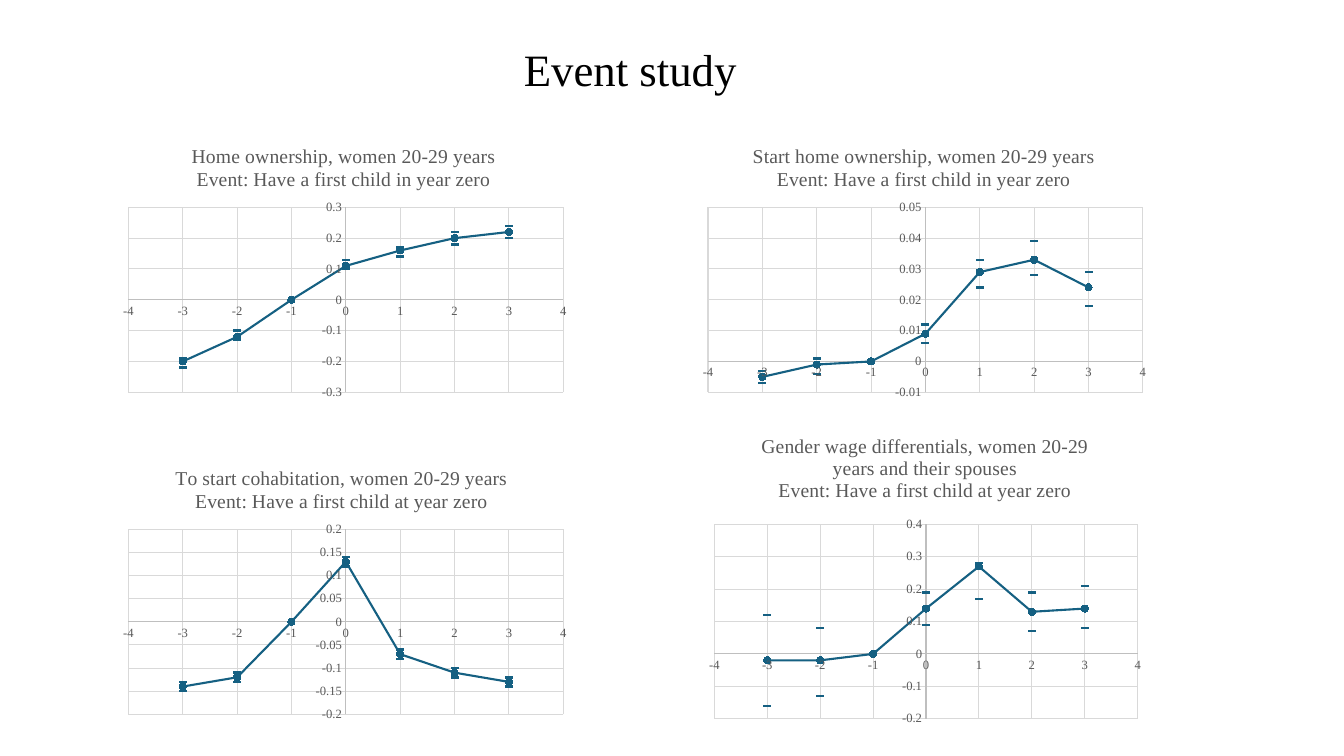
from lxml import etree
from pptx import Presentation
from pptx.chart.data import XyChartData
from pptx.dml.color import RGBColor
from pptx.enum import chart as ch, text as tx
from pptx.oxml import ns
from pptx.util import Pt

# Content: title lines, then estimate, lower and upper bound by year
FACE = "Times New Roman"
BLUE, GRAY, GRID, AXIS = "156082", "595959", "D9D9D9", "BFBFBF"
HEAD = "Event study"
YEARS = [-3, -2, -1, 0, 1, 2, 3]
GAP = None
AUTO = None
PLOT = (0.03, 0.28, 0.94, 0.67)
PANELS = [
    dict(at=(81.8, 92.9, 330.5, 197.3), plot=PLOT, name=(0.16, 0.04),
         axis=AUTO,
         title=["Home ownership, women 20-29 years",
                "Event: Have a first child in year zero"],
         rows=[[-0.2, -0.12, 0, 0.11, 0.16, 0.2, 0.22],
               [-0.22, -0.13, GAP, 0.1, 0.14, 0.18, 0.2],
               [-0.19, -0.1, GAP, 0.13, 0.17, 0.22, 0.24]]),
    dict(at=(495.8, 92.9, 330.5, 197.3), plot=PLOT, name=(0.12, 0.04),
         axis=(-0.01, 0.05, 0.01),
         title=["Start home ownership, women 20-29 years",
                "Event: Have a first child in year zero"],
         rows=[[-0.005, -0.001, 0, 0.009, 0.029, 0.033, 0.024],
               [-0.007, -0.004, GAP, 0.006, 0.024, 0.028, 0.018],
               [-0.003, 0.001, GAP, 0.012, 0.033, 0.039, 0.029]]),
    dict(at=(81.8, 322.9, 330.5, 197.3), plot=PLOT, name=(0.125, 0.04),
         axis=(-0.2, 0.2, 0.05),
         title=["To start cohabitation, women 20-29 years",
                "Event: Have a first child at year zero"],
         rows=[[-0.14, -0.12, 0, 0.13, -0.07, -0.11, -0.13],
               [-0.15, -0.13, GAP, 0.12, -0.08, -0.12, -0.14],
               [-0.13, -0.11, GAP, 0.14, -0.06, -0.1, -0.12]]),
    dict(at=(495.4, 299.5, 330.5, 229), plot=(0.045, 0.328, 0.915, 0.606),
         name=(0.14, 0.035), axis=(-0.2, 0.4, 0.1),
         title=["Gender wage differentials, women 20-29 years and their spouses",
                "Event: Have a first child at year zero"],
         rows=[[-0.02, -0.02, 0, 0.14, 0.27, 0.13, 0.14],
               [-0.16, -0.13, GAP, 0.09, 0.17, 0.07, 0.08],
               [0.12, 0.08, GAP, 0.19, 0.28, 0.19, 0.21]]),
]


def color(code):
    return RGBColor.from_string(code)


def style(font, size, code):
    font.name, font.size, font.bold = FACE, Pt(size), False
    font.color.rgb = color(code)


def stroke(line, code, width):
    line.color.rgb = color(code)
    line.width = Pt(width)


def place(owner, spots, inner=False):
    """Give a chart part a fixed place, as shares of the chart."""
    old = owner.find(ns.qn("c:layout"))
    if old is not None:
        owner.remove(old)
    first = owner.find(ns.qn("c:tx"))
    lay = etree.Element(ns.qn("c:layout"))
    owner.insert(0 if first is None else 1, lay)
    man = etree.SubElement(lay, ns.qn("c:manualLayout"))
    tags = [("layoutTarget", "inner")] if inner else []
    tags += [("xMode", "edge"), ("yMode", "edge")]
    tags += zip("xywh", spots)
    for tag, val in tags:
        etree.SubElement(man, ns.qn("c:" + tag)).set("val", str(val))


def dress(axis, span):
    if span is not AUTO:
        axis.minimum_scale, axis.maximum_scale, axis.major_unit = span
    axis.major_tick_mark = axis.minor_tick_mark = ch.XL_TICK_MARK.NONE
    axis.has_major_gridlines = True
    stroke(axis.major_gridlines.format.line, GRID, 0.75)
    stroke(axis.format.line, AXIS, 0.75)
    axis.tick_label_position = ch.XL_TICK_LABEL_POSITION.NEXT_TO_AXIS
    labels = axis.tick_labels
    labels.number_format, labels.number_format_is_linked = "General", False
    style(labels.font, 9, GRAY)


def draw(slide, panel):
    data = XyChartData()
    for i, row in enumerate(panel["rows"], 1):
        points = data.add_series(f"Series {i}")
        for year, val in zip(YEARS, row):
            points.add_data_point(year, val)
    chart = slide.shapes.add_chart(
        ch.XL_CHART_TYPE.XY_SCATTER_LINES, *map(Pt, panel["at"]), data).chart
    chart.has_legend = False
    style(chart.font, 10, "000000")
    chart.plots[0].vary_by_categories = False

    # Leave gaps empty
    for val in list(chart._chartSpace.iter(ns.qn("c:v"))):
        if val.text in ("None", "", None):
            point = val.getparent()
            point.getparent().remove(point)

    # Chart title
    frame = chart.chart_title.text_frame
    for i, words in enumerate(panel["title"]):
        para = frame.add_paragraph() if i else frame.paragraphs[0]
        run = para.add_run()
        run.text = words
        style(run.font, 14, GRAY)
    place(chart.chart_title._element, panel["name"])

    # Axes and plot area
    dress(chart.category_axis, (-4, 4, 1))
    dress(chart.value_axis, panel["axis"])
    place(chart._chartSpace.chart.plotArea, panel["plot"], inner=True)

    # Estimate as a line, bounds as dashes
    for i, ser in enumerate(chart.plots[0].series):
        ser.smooth = False
        mark = ser.marker
        mark.style = ch.XL_MARKER_STYLE.DASH if i else ch.XL_MARKER_STYLE.CIRCLE
        mark.size = 5
        mark.format.fill.solid()
        mark.format.fill.fore_color.rgb = color(BLUE)
        stroke(mark.format.line, BLUE, 0.75)
        if i:
            ser.format.line.fill.background()
        else:
            stroke(ser.format.line, BLUE, 1.5)


def main():
    deck = Presentation()
    deck.slide_width, deck.slide_height = Pt(960), Pt(540)
    slide = deck.slides.add_slide(deck.slide_layouts[6])

    # Heading
    box = slide.shapes.add_textbox(Pt(226), Pt(20.5), Pt(448.5), Pt(62))
    frame = box.text_frame
    frame.word_wrap = True
    frame.vertical_anchor = tx.MSO_ANCHOR.MIDDLE
    para = frame.paragraphs[0]
    para.alignment, para.line_spacing = tx.PP_ALIGN.CENTER, 0.9
    run = para.add_run()
    run.text = HEAD
    style(run.font, 32, "000000")

    # Panels
    for panel in PANELS:
        draw(slide, panel)
    deck.save("out.pptx")


if __name__ == "__main__":
    main()
